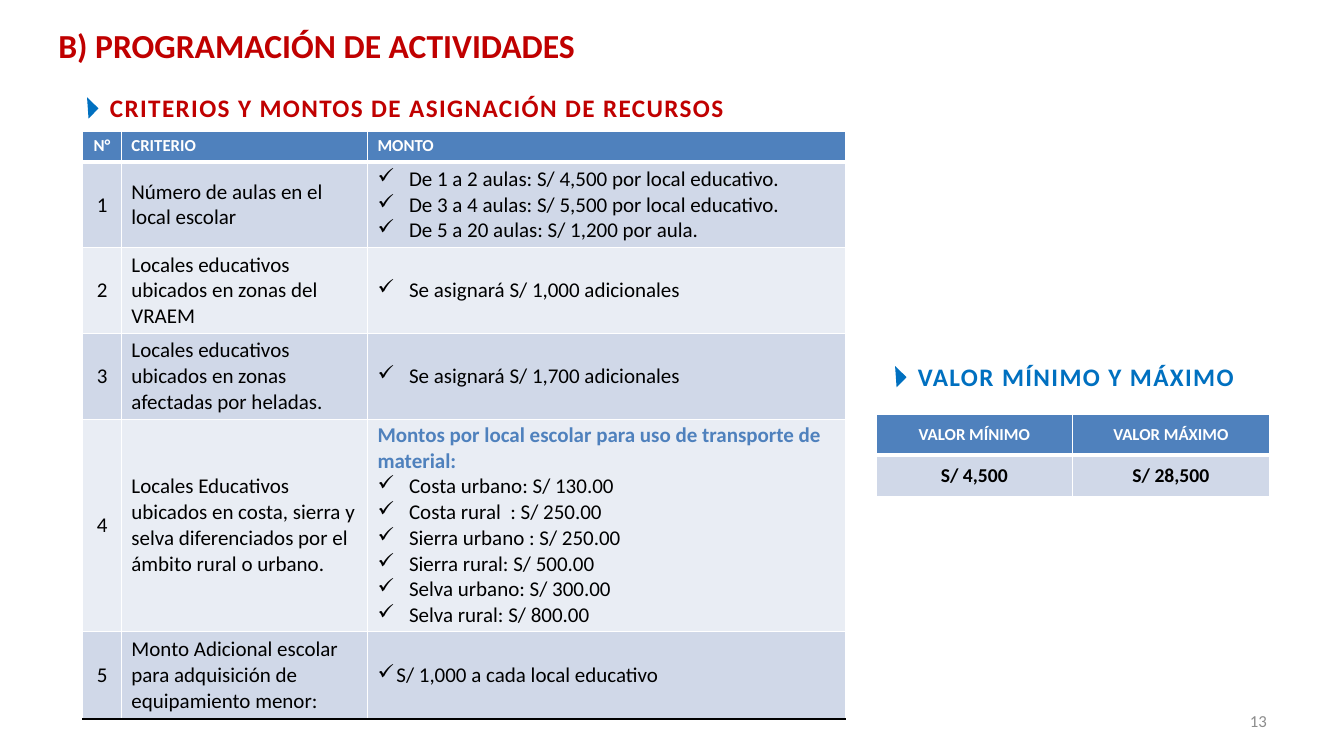
import pptx
import pptx.dml.color
import pptx.enum.shapes
import pptx.enum.text
import pptx.oxml.ns
import pptx.util
from dataclasses import dataclass
from lxml import etree

ALIGN = pptx.enum.text.PP_ALIGN
ANCHOR = pptx.enum.text.MSO_ANCHOR
COLUMNS, ROWS = 160, 90
UNIT = pptx.util.Pt(6)  # side of one square of the slide's grid


@dataclass(frozen=True)
class Style:
    size: float
    color: str
    bold: bool = False
    align: ALIGN = ALIGN.LEFT
    spacing: int = 0
    indent: float = 0


@dataclass(frozen=True)
class Theme:
    font = "Calibri"
    red, blue = "C00000", "0070C0"
    header, band, plain = "4F81BD", "D0D8E8", "E9EDF4"
    rule, closing = "FFFFFF", "000000"
    styles = {
        "title": Style(24, red, True),
        "criteria heading": Style(18, red, True, spacing=100),
        "values heading": Style(18, blue, True, spacing=100),
        "page": Style(12, "8C8C8C", align=ALIGN.RIGHT),
        "head": Style(12, rule, True),
        "centred head": Style(12, rule, True, ALIGN.CENTER),
        "number": Style(15, closing, align=ALIGN.CENTER),
        "body": Style(15, closing),
        "subhead": Style(15, header, True),
        "check": Style(15, closing, indent=3.75),
        "close check": Style(15, closing, indent=2.25),
        "value": Style(14, closing, True, ALIGN.CENTER),
    }


def rgb(color):
    return pptx.dml.color.RGBColor.from_string(color)


def write(frame, lines):
    """Write (style name, text) pairs, one paragraph each."""
    frame.word_wrap = True
    for index, (name, text) in enumerate(lines):
        style = Theme.styles[name]
        para = frame.add_paragraph() if index else frame.paragraphs[0]
        para.alignment = style.align
        if style.indent:
            properties = para._p.get_or_add_pPr()
            indent = int(style.indent * UNIT)
            properties.set("marL", str(indent))
            properties.set("indent", str(-indent))
            etree.SubElement(properties, pptx.oxml.ns.qn("a:buChar"), char="✓")
        span = para.add_run()
        span.text = text
        span.font.name = Theme.font
        span.font.size = pptx.util.Pt(style.size)
        span.font.bold = style.bold
        span.font.color.rgb = rgb(style.color)
        if style.spacing:
            span._r.get_or_add_rPr().set("spc", str(style.spacing))


deck = pptx.Presentation()
deck.slide_width, deck.slide_height = COLUMNS * UNIT, ROWS * UNIT
slide = deck.slides.add_slide(deck.slide_layouts[5])

# Title, headings and page number
texts = [
    ("title", "B) PROGRAMACIÓN DE ACTIVIDADES", (5.75, 2.4, 64.2, 6.7), ANCHOR.TOP),
    ("criteria heading", "CRITERIOS Y MONTOS DE ASIGNACIÓN DE RECURSOS",
     (11.9, 11.4, 78.8, 2.9), ANCHOR.MIDDLE),
    ("values heading", "VALOR MÍNIMO Y MÁXIMO", (108.1, 41.5, 47.3, 6.7), ANCHOR.MIDDLE),
    ("page", "13", (114.7, 83.4, 37.3, 4.8), ANCHOR.MIDDLE),
]
for name, text, place, anchor in texts:
    left, top, width, height = (int(length * UNIT) for length in place)
    if name == "title":
        box = slide.shapes.title
        box.left, box.top, box.width, box.height = left, top, width, height
    else:
        box = slide.shapes.add_textbox(left, top, width, height)
    box.text_frame.auto_size = pptx.enum.text.MSO_AUTO_SIZE.NONE
    box.text_frame.vertical_anchor = anchor
    write(box.text_frame, [(name, text)])

    if name.endswith("heading"):
        marker_width, marker_height = int(1.9 * UNIT), int(1.7 * UNIT)
        marker = slide.shapes.add_shape(
            pptx.enum.shapes.MSO_SHAPE.RIGHT_TRIANGLE, left - int(2.4 * UNIT),
            top + (height - marker_height) // 2, marker_width, marker_height)
        marker.rotation = 224.1
        marker.shadow.inherit = False
        marker.fill.solid()
        marker.fill.fore_color.rgb = rgb(Theme.blue)
        marker.line.fill.background()

# Tables: each cell is a list of (style name, text) pairs
criteria = [
    ("Número de aulas en el local escolar",
     [("check", "De 1 a 2 aulas: S/ 4,500 por local educativo."),
      ("check", "De 3 a 4 aulas: S/ 5,500 por local educativo."),
      ("check", "De 5 a 20 aulas: S/ 1,200 por aula.")]),
    ("Locales educativos ubicados en zonas del VRAEM",
     [("check", "Se asignará S/ 1,000 adicionales")]),
    ("Locales educativos ubicados en zonas afectadas por heladas.",
     [("check", "Se asignará S/ 1,700 adicionales")]),
    ("Locales Educativos ubicados en costa, sierra y selva diferenciados por el "
     "ámbito rural o urbano.",
     [("subhead", "Montos por local escolar para uso de transporte de material:"),
      ("check", "Costa urbano: S/ 130.00"),
      ("check", "Costa rural  : S/ 250.00"),
      ("check", "Sierra urbano : S/ 250.00"),
      ("check", "Sierra rural: S/ 500.00"),
      ("check", "Selva urbano: S/ 300.00"),
      ("check", "Selva rural: S/ 800.00")]),
    ("Monto Adicional escolar para adquisición de equipamiento menor:",
     [("close check", "S/ 1,000 a cada local educativo")]),
]
criteria_cells = [[[("centred head", "N°")], [("head", "CRITERIO")], [("head", "MONTO")]]]
for number, (criterion, amounts) in enumerate(criteria, start=1):
    criteria_cells.append([[("number", str(number))], [("body", criterion)], amounts])
value_cells = [
    [[("centred head", "VALOR MÍNIMO")], [("centred head", "VALOR MÁXIMO")]],
    [[("value", "S/ 4,500")], [("value", "S/ 28,500")]],
]
tables = [
    ((9.85, 15.7), (4.6, 29.3, 56.9), (3.6, 10.2, 10.2, 10.2, 25.3, 10.4),
     criteria_cells, ANCHOR.TOP, Theme.closing),
    ((104.3, 49.3), (23.4, 23.4), (4.9, 4.9), value_cells, ANCHOR.MIDDLE, Theme.rule),
]
for (left, top), widths, heights, rows, head_anchor, last_rule in tables:
    table = slide.shapes.add_table(
        len(rows), len(widths), int(left * UNIT), int(top * UNIT),
        int(sum(widths) * UNIT), int(sum(heights) * UNIT)).table
    table.horz_banding = False
    for column, width in zip(table.columns, widths):
        column.width = int(width * UNIT)
    for row_index, (height, row) in enumerate(zip(heights, rows)):
        table.rows[row_index].height = int(height * UNIT)
        fill = Theme.band if row_index % 2 else Theme.plain
        for column_index, lines in enumerate(row):
            cell = table.cell(row_index, column_index)
            cell.margin_top = cell.margin_bottom = int(0.4 * UNIT)
            cell.vertical_anchor = ANCHOR.MIDDLE if row_index else head_anchor
            borders = {
                "L": (1, Theme.rule),
                "R": (1, Theme.rule),
                "T": (3 if row_index == 1 else 1, Theme.rule),
                "B": (1 if row_index else 3,
                      last_rule if row_index == len(rows) - 1 else Theme.rule),
            }
            for side, (weight, color) in borders.items():
                line = etree.SubElement(
                    cell._tc.get_or_add_tcPr(), pptx.oxml.ns.qn("a:ln" + side),
                    w=str(pptx.util.Pt(weight)))
                solid = etree.SubElement(line, pptx.oxml.ns.qn("a:solidFill"))
                etree.SubElement(solid, pptx.oxml.ns.qn("a:srgbClr"), val=color)
            cell.fill.solid()
            cell.fill.fore_color.rgb = rgb(fill if row_index else Theme.header)
            write(cell.text_frame, lines)

deck.save("out.pptx")
